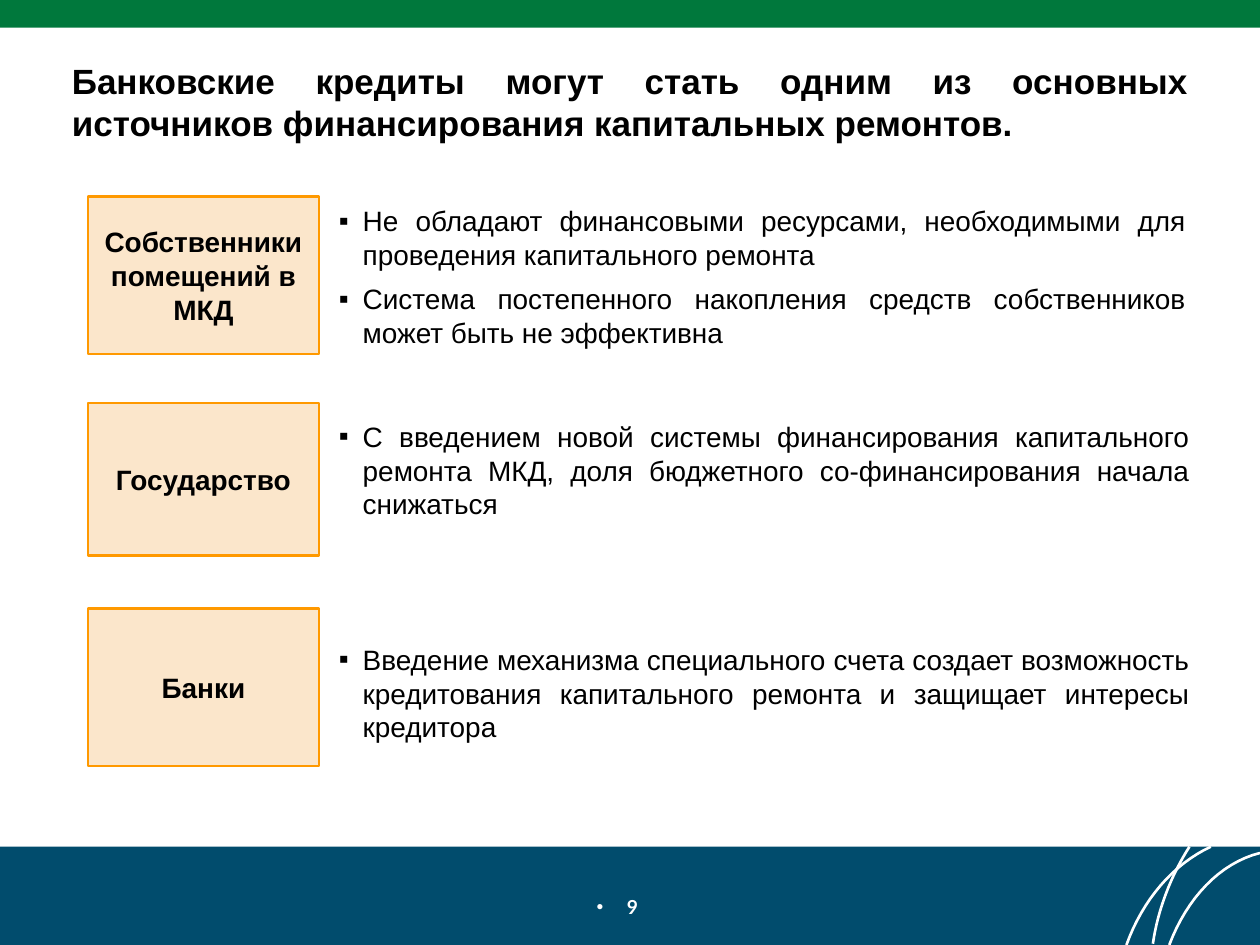
import pptx
import pptx.util
import pptx.dml.color
import pptx.enum.shapes
import pptx.enum.text
import pptx.oxml
import pptx.oxml.ns

Inches = pptx.util.Inches
Pt = pptx.util.Pt
ALIGN = pptx.enum.text.PP_ALIGN
ANCHOR = pptx.enum.text.MSO_ANCHOR

TITLE = ("Банковские кредиты могут стать одним из основных "
         "источников финансирования капитальных ремонтов.")

# Each row: label, box top, box height, text top, text height, bullet points
ROWS = [
    ("Собственники помещений в МКД", 1.56, 1.25, 1.57, 1.26, [
        "Не обладают финансовыми ресурсами, необходимыми для "
        "проведения капитального ремонта",
        "Система постепенного накопления средств собственников "
        "может быть не эффективна"]),
    ("Государство", 3.2, 1.21, 3.28, 0.91, [
        "С введением новой системы финансирования капитального ремонта МКД, "
        "доля бюджетного со-финансирования начала снижаться"]),
    ("Банки", 4.83, 1.25, 5.05, 0.91, [
        "Введение механизма специального счета создает возможность "
        "кредитования капитального ремонта и защищает интересы кредитора"]),
]

# Bezier control points of the footer arcs
ARCS = [
    [(9.61, 6.72), (9.31, 6.86), (9.07, 7.14), (8.94, 7.5)],
    [(10, 6.77), (9.68, 6.85), (9.42, 7.13), (9.28, 7.5)],
    [(9.44, 6.72), (9.3, 6.94), (9.19, 7.21), (9.15, 7.49)],
]


def color(value):
    return pptx.dml.color.RGBColor.from_string(value)


def format_paragraph(paragraph, size, alignment, bold=False, font="Arial", text_color="000000"):
    paragraph.alignment = alignment
    for run in paragraph.runs:
        run.font.name = font
        run.font.size = Pt(size)
        run.font.bold = bold
        run.font.color.rgb = color(text_color)


def add_bullet(paragraph, character, indent):
    properties = paragraph._p.get_or_add_pPr()
    properties.set("marL", str(Inches(indent)))
    properties.set("indent", str(-Inches(indent)))
    for tag, attribute, value in (("a:buFont", "typeface", "Arial"),
                                  ("a:buChar", "char", character)):
        element = pptx.oxml.parse_xml(f"<{tag} {pptx.oxml.ns.nsdecls('a')}/>")
        element.set(attribute, value)
        properties.append(element)


def add_rectangle(slide, left, top, width, height, fill, line=None):
    shape = slide.shapes.add_shape(
        pptx.enum.shapes.MSO_SHAPE.RECTANGLE,
        Inches(left), Inches(top), Inches(width), Inches(height))
    shape.shadow.inherit = False
    shape.fill.solid()
    shape.fill.fore_color.rgb = color(fill)
    if line:
        shape.line.color.rgb = color(line)
        shape.line.width = Pt(1.25)
    else:
        shape.line.fill.background()
    return shape


def add_text_box(slide, left, top, width, height):
    box = slide.shapes.add_textbox(Inches(left), Inches(top), Inches(width), Inches(height))
    box.text_frame.word_wrap = True
    return box.text_frame


def add_arc(slide, controls, steps=16):
    points = []
    for step in range(steps + 1):
        t = step / steps
        weights = ((1 - t) ** 3, 3 * t * (1 - t) ** 2, 3 * t ** 2 * (1 - t), t ** 3)
        points.append(tuple(
            Inches(sum(weight * control[axis] for weight, control in zip(weights, controls)))
            for axis in (0, 1)))
    builder = slide.shapes.build_freeform(*points[0])
    builder.add_line_segments(points[1:], close=False)
    arc = builder.convert_to_shape()
    arc.shadow.inherit = False
    arc.fill.background()
    arc.line.color.rgb = color("FFFFFF")
    arc.line.width = Pt(1.5)


def add_title(slide):
    title = slide.shapes.title
    title.left, title.top = Inches(0.47), Inches(0.42)
    title.width, title.height = Inches(9.06), Inches(0.77)
    frame = title.text_frame
    frame.text = TITLE
    frame.word_wrap = True
    frame.vertical_anchor = ANCHOR.TOP
    format_paragraph(frame.paragraphs[0], 20, ALIGN.JUSTIFY, bold=True)


def add_row(slide, label, box_top, box_height, text_top, text_height, points):
    # Label box
    box = add_rectangle(slide, 0.7, box_top, 1.83, box_height, "FBE6CB", "FF9900")
    box.text_frame.text = label
    box.text_frame.word_wrap = True
    box.text_frame.vertical_anchor = ANCHOR.MIDDLE
    format_paragraph(box.text_frame.paragraphs[0], 16, ALIGN.CENTER, bold=True)

    # Bullet points
    frame = add_text_box(slide, 2.59, text_top, 6.92 if len(points) > 1 else 6.95, text_height)
    frame.text = "\n".join(points)
    for paragraph in frame.paragraphs:
        format_paragraph(paragraph, 16, ALIGN.JUSTIFY)
        if len(points) > 1:
            paragraph.space_after = Pt(6)
        add_bullet(paragraph, "▪", 0.19)


def add_page_number(slide, number):
    frame = add_text_box(slide, 3.97, 7.04, 2.06, 0.31)
    frame.margin_right = Inches(0.3)
    frame.vertical_anchor = ANCHOR.MIDDLE
    frame.text = number
    format_paragraph(frame.paragraphs[0], 11, ALIGN.CENTER, True, "Lato", "FFFFFF")
    add_bullet(frame.paragraphs[0], "•", 0.24)


def main():
    presentation = pptx.Presentation()
    presentation.slide_width = Inches(10)
    presentation.slide_height = Inches(7.5)
    slide = presentation.slides.add_slide(presentation.slide_layouts[5])

    # Footer and header bands
    add_rectangle(slide, 0, 6.72, 10, 0.78, "014C6D")
    for controls in ARCS:
        add_arc(slide, controls)
    add_rectangle(slide, 0, 0, 10, 0.22, "00783C")
    add_page_number(slide, "9")

    # Content
    add_title(slide)
    for row in ROWS:
        add_row(slide, *row)

    presentation.save("out.pptx")


if __name__ == "__main__":
    main()
